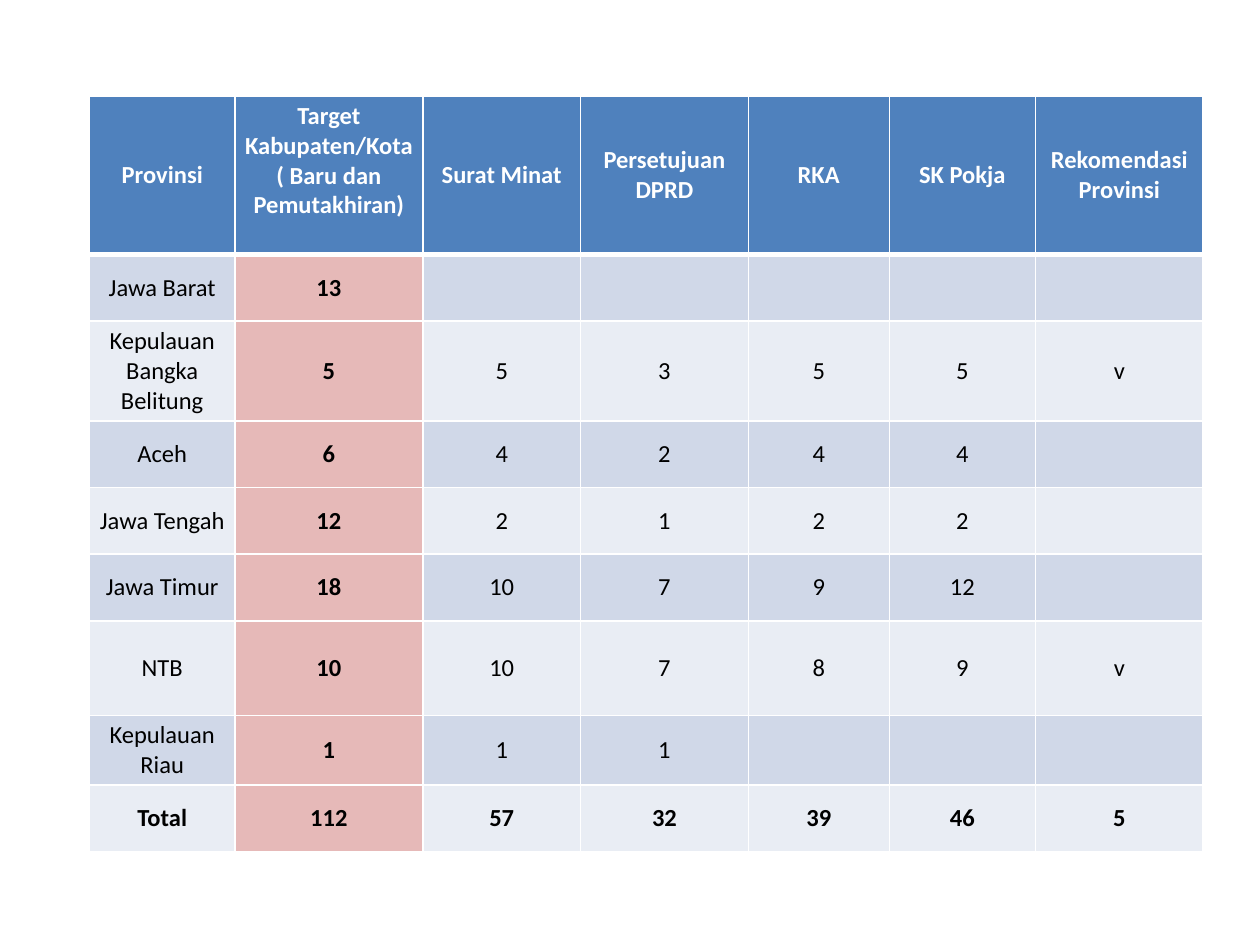
from dataclasses import dataclass

from lxml import etree
from pptx import Presentation
from pptx.dml.color import RGBColor
from pptx.enum import text
from pptx.oxml import ns
from pptx.util import Pt


@dataclass(frozen=True)
class Theme:
    font: str = "Calibri"
    size: float = 14
    header: str = "4F81BD"
    bands: tuple = ("D0D8E8", "E9EDF4")
    target: str = "E6B9B8"
    light: str = "FFFFFF"
    dark: str = "000000"
    rule: float = 1
    header_rule: float = 3


THEME = Theme()
TABLE_BOX = (51.1, 54.9, 636.5, 427)
COLUMN_WIDTHS = (83.2, 107.3, 90.2, 95.8, 80.6, 83.5, 95.9)
ROW_HEIGHTS = (86.4, 38.1, 31.7, 38.1, 38.1, 38.1, 54, 38.1, 38.1)
INSETS = {"margin_left": 5, "margin_right": 5, "margin_top": 2.9, "margin_bottom": 2.9}
TARGET_HEADER_BOTTOM = 19.5
ROWS = (
    ("Provinsi", "Target Kabupaten/Kota ( Baru dan Pemutakhiran)", "Surat Minat",
     "Persetujuan DPRD", "RKA", "SK Pokja", "Rekomendasi Provinsi"),
    ("Jawa Barat", "13", "", "", "", "", ""),
    ("Kepulauan Bangka Belitung", "5", "5", "3", "5", "5", "v"),
    ("Aceh", "6", "4", "2", "4", "4", ""),
    ("Jawa Tengah", "12", "2", "1", "2", "2", ""),
    ("Jawa Timur", "18", "10", "7", "9", "12", ""),
    ("NTB", "10", "10", "7", "8", "9", "v"),
    ("Kepulauan Riau", "1", "1", "1", "", "", ""),
    ("Total", "112", "57", "32", "39", "46", "5"),
)


def set_borders(cell, widths):
    tc_pr = cell._tc.get_or_add_tcPr()
    for i, (side, width) in enumerate(widths.items()):
        line = etree.Element(ns.qn(f"a:ln{side}"), w=str(Pt(width)))
        fill = etree.SubElement(line, ns.qn("a:solidFill"))
        etree.SubElement(fill, ns.qn("a:srgbClr"), val=THEME.light)
        tc_pr.insert(i, line)


def write_cell(cell, words, fill, color, bold):
    cell.fill.solid()
    cell.fill.fore_color.rgb = RGBColor.from_string(fill)
    cell.vertical_anchor = text.MSO_ANCHOR.MIDDLE
    for name, value in INSETS.items():
        setattr(cell, name, Pt(value))
    p = cell.text_frame.paragraphs[0]
    p.alignment = text.PP_ALIGN.CENTER
    p.font.size = Pt(THEME.size)
    if words:
        r = p.add_run()
        r.text = words
        for name, value in {"name": THEME.font, "size": Pt(THEME.size), "bold": bold}.items():
            setattr(r.font, name, value)
        r.font.color.rgb = RGBColor.from_string(color)


def add_progress_table(s, box):
    frame = s.shapes.add_table(len(ROWS), len(ROWS[0]), *(Pt(v) for v in box))
    table = frame.table
    for column, width in zip(table.columns, COLUMN_WIDTHS):
        column.width = Pt(width)
    for row, height in zip(table.rows, ROW_HEIGHTS):
        row.height = Pt(height)
    last = len(ROWS) - 1
    for i, row in enumerate(ROWS):
        for j, words in enumerate(row):
            is_header, is_target = i == 0, j == 1
            band = THEME.target if is_target else THEME.bands[(i - 1) % 2]
            cell = table.cell(i, j)
            write_cell(
                cell, words,
                fill=THEME.header if is_header else band,
                color=THEME.light if is_header else THEME.dark,
                bold=is_header or is_target or i == last,
            )
            set_borders(cell, {
                "L": THEME.rule,
                "R": THEME.rule,
                "T": THEME.header_rule if i == 1 else THEME.rule,
                "B": THEME.header_rule if is_header else THEME.rule,
            })
    table.cell(0, 1).margin_bottom = Pt(TARGET_HEADER_BOTTOM)


def main():
    prs = Presentation()
    prs.slide_width, prs.slide_height = Pt(720), Pt(540)
    s = prs.slides.add_slide(prs.slide_layouts[6])
    add_progress_table(s, TABLE_BOX)
    prs.save("out.pptx")


if __name__ == "__main__":
    main()
